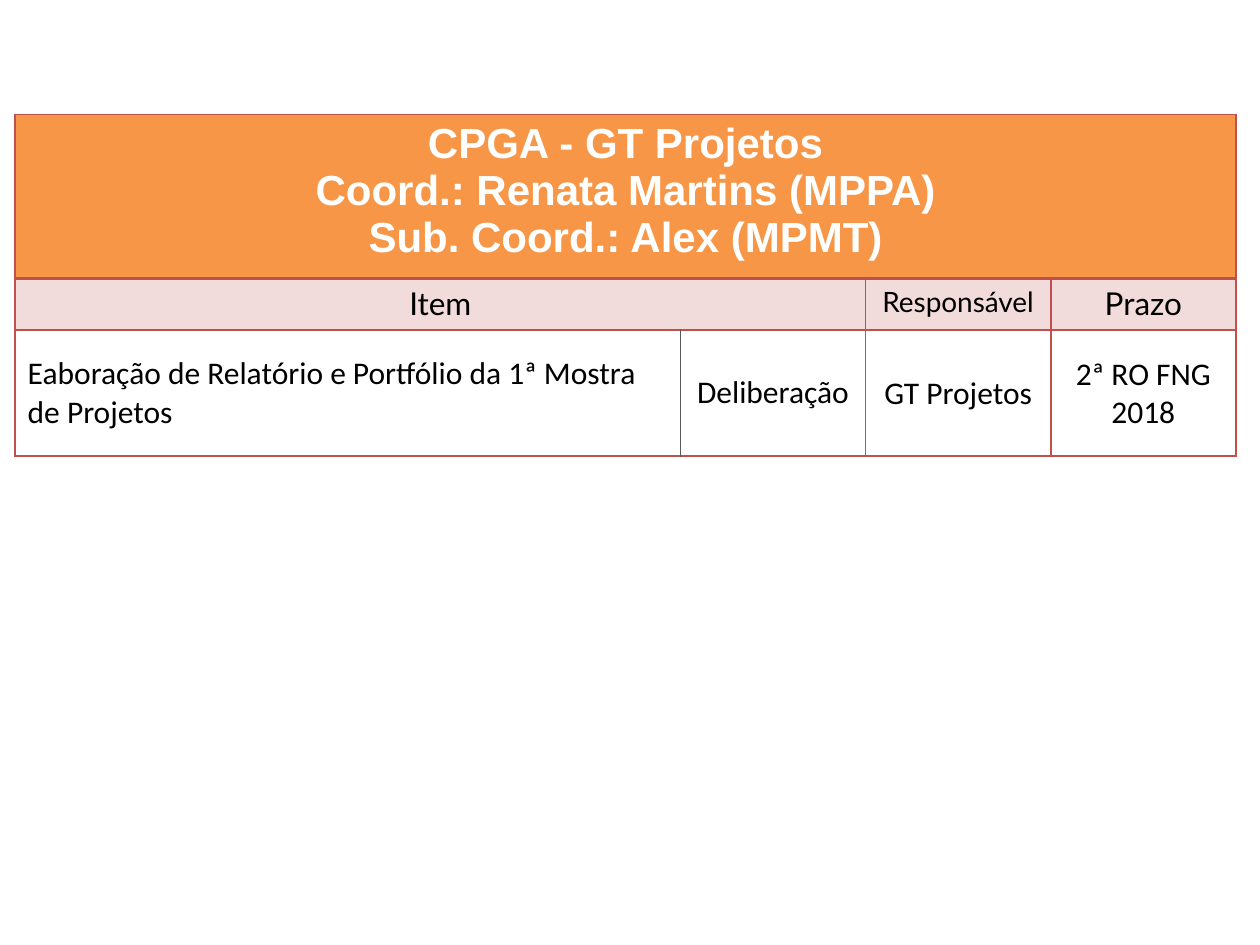
from lxml import etree
from pptx import Presentation
from pptx.dml.color import RGBColor
from pptx.enum.text import MSO_ANCHOR, PP_ALIGN
from pptx.oxml.ns import qn
from pptx.util import Inches, Pt

LEFT, CENTER = PP_ALIGN.LEFT, PP_ALIGN.CENTER
TOP, MIDDLE = MSO_ANCHOR.TOP, MSO_ANCHOR.MIDDLE
COLORS = {
    "banner": "F79646",
    "header": "F2DCDB",
    "border": "C0504D",
    "divider": "595959",
    "white": "FFFFFF",
    "black": "000000",
}
WIDE_MARGINS = (0.1, 0.05, 0.1, 0.05)
TIGHT_MARGINS = (0.01, 0.01, 0.01, 0)
COLUMN_WIDTHS = (5.28, 1.47, 1.47, 1.47)
ROW_HEIGHTS = (1.3, 0.41, 1)
BANNER_LINES = ("CPGA - GT Projetos", "Coord.: Renata Martins (MPPA)", "Sub. Coord.: Alex (MPMT)")
HEADERS = ((0, "Item", 18), (2, "Responsável", 16), (3, "Prazo", 18))
DELIVERABLE = (
    ("Eaboração de Relatório e Portfólio da 1ª Mostra de Projetos", LEFT, WIDE_MARGINS),
    ("Deliberação", CENTER, WIDE_MARGINS),
    ("GT Projetos", CENTER, TIGHT_MARGINS),
    ("2ª RO FNG 2018", CENTER, TIGHT_MARGINS),
)


class SlideBuilder:
    def __init__(self, slide):
        self.slide = slide

    def table(self, left, top, widths, heights):
        frame = self.slide.shapes.add_table(
            len(heights), len(widths), Inches(left), Inches(top),
            Inches(sum(widths)), Inches(sum(heights)))
        table = frame.table
        table.first_row = False
        table.horz_banding = False
        for column, width in zip(table.columns, widths):
            column.width = Inches(width)
        for row, height in zip(table.rows, heights):
            row.height = Inches(height)
        return table

    def border(self, cell, side, color="border", width=1):
        properties = cell._tc.get_or_add_tcPr()
        line = etree.SubElement(properties, qn(f"a:ln{side}"), w=str(Pt(width)))
        fill = etree.SubElement(line, qn("a:solidFill"))
        etree.SubElement(fill, qn("a:srgbClr"), val=COLORS[color])

    def fill(self, cell, color=None):
        if color:
            cell.fill.solid()
            cell.fill.fore_color.rgb = RGBColor.from_string(COLORS[color])
        else:
            cell.fill.background()

    def text(self, cell, lines, size=18, font="Calibri", color="black", bold=False,
             align=CENTER, anchor=TOP, margins=WIDE_MARGINS):
        cell.vertical_anchor = anchor
        cell.margin_left, cell.margin_top, cell.margin_right, cell.margin_bottom = map(Inches, margins)
        cell.text = "\n".join(lines)
        for paragraph in cell.text_frame.paragraphs:
            paragraph.alignment = align
            paragraph.font.size = Pt(size)
            paragraph.font.name = font
            paragraph.font.bold = bold
            paragraph.font.color.rgb = RGBColor.from_string(COLORS[color])


def main():
    deck = Presentation()
    deck.slide_width, deck.slide_height = Inches(10), Inches(7.5)
    builder = SlideBuilder(deck.slides.add_slide(deck.slide_layouts[6]))
    table = builder.table(0.12, 0.91, COLUMN_WIDTHS, ROW_HEIGHTS)

    for row, fill in enumerate(("banner", "header", None)):
        for column in range(len(COLUMN_WIDTHS)):
            cell = table.cell(row, column)
            for side in "LRTB":
                divider = row == 2 and (column, side) in ((0, "R"), (1, "L"))
                heavy = (row, side) in ((0, "B"), (1, "T"))
                builder.border(cell, side, "divider" if divider else "border",
                               0.5 if divider else 2 if heavy else 1)
            builder.fill(cell, fill)

    table.cell(0, 0).merge(table.cell(0, 3))
    table.cell(1, 0).merge(table.cell(1, 1))

    builder.text(table.cell(0, 0), BANNER_LINES, 24, "Arial", "white", True)
    for column, label, size in HEADERS:
        builder.text(table.cell(1, column), [label], size, "Lato")
    for column, (label, align, margins) in enumerate(DELIVERABLE):
        builder.text(table.cell(2, column), [label], align=align, anchor=MIDDLE, margins=margins)

    deck.save("out.pptx")


if __name__ == "__main__":
    main()
